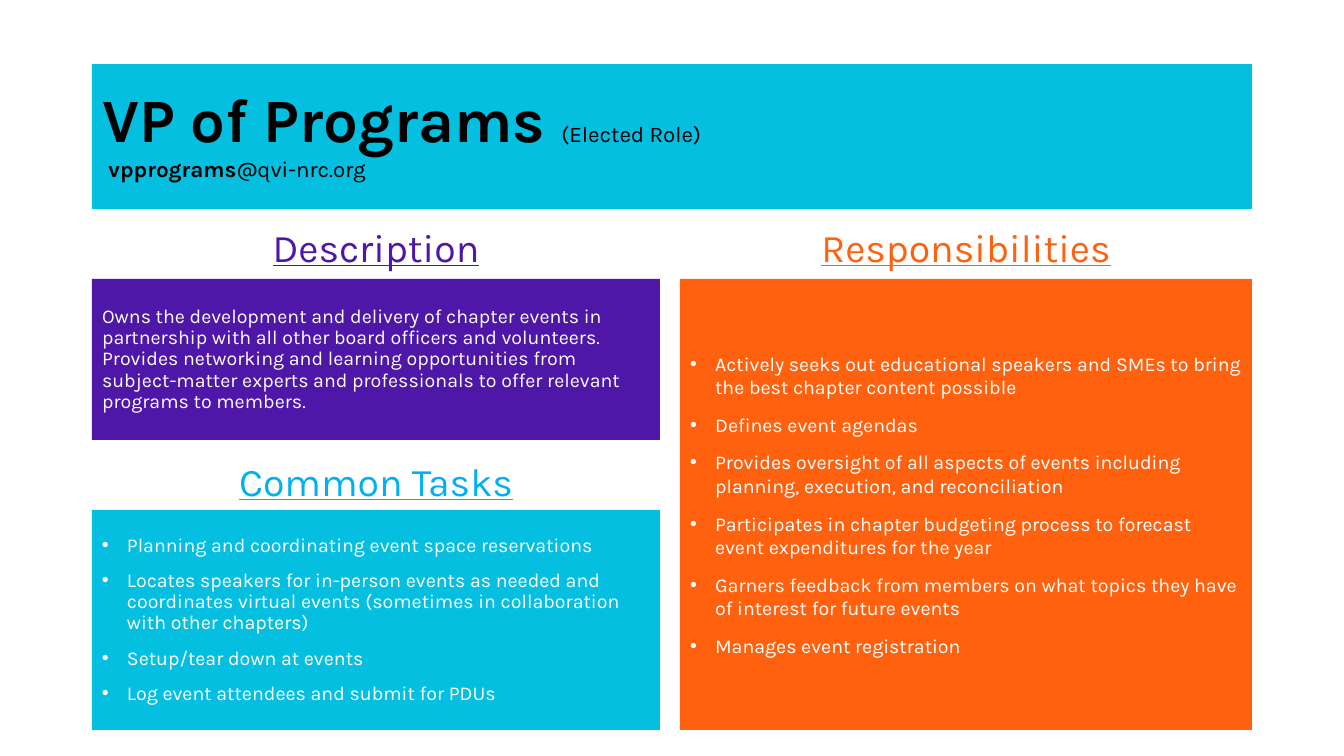
from lxml.etree import SubElement
from pptx import Presentation
from pptx.dml.color import RGBColor
from pptx.enum.text import MSO_ANCHOR, MSO_AUTO_SIZE, PP_ALIGN
from pptx.oxml.ns import qn
from pptx.util import Emu, Pt

FONT = "Karla"
CYAN, SKY, PURPLE, ORANGE = "04BFE0", "00B0F0", "4E17A8", "FF610F"
BLACK, WHITE = "000000", "FFFFFF"

TITLE_LINES = [
    [("VP of Programs ", 44, True), ("(Elected Role)", 16, False)],
    [(" ", 18, True), ("vpprograms", 16, True), ("@qvi-nrc.org", 16, False)],
]
DESCRIPTION = [
    "Owns the development and delivery of chapter events in partnership with all other "
    "board officers and volunteers. Provides networking and learning opportunities from "
    "subject-matter experts and professionals to offer relevant programs to members.",
]
TASKS = [
    "Planning and coordinating event space reservations",
    "Locates speakers for in-person events as needed and coordinates virtual events "
    "(sometimes in collaboration with other chapters)",
    "Setup/tear down at events",
    "Log event attendees and submit for PDUs",
]
RESPONSIBILITIES = [
    "Actively seeks out educational speakers and SMEs to bring the best chapter content possible",
    "Defines event agendas",
    "Provides oversight of all aspects of events including planning, execution, and reconciliation",
    "Participates in chapter budgeting process to forecast event expenditures for the year",
    "Garners feedback from members on what topics they have of interest for future events",
    "Manages event registration",
]

LEFT, RIGHT, GUTTER, COLUMN = 92, 1252, 20, 568
RIGHT_COLUMN = LEFT + COLUMN + GUTTER
BOTTOM = 730
INDENT = 25

SECTIONS = [
    dict(heading="Description", heading_color=PURPLE, fill=PURPLE, lines=DESCRIPTION,
         bulleted=False, spacing=0.9, left=LEFT, right=LEFT + COLUMN,
         heading_top=185, heading_bottom=276, top=279, bottom=440, holders=(1, 2)),
    dict(heading="Responsibilities", heading_color=ORANGE, fill=ORANGE, lines=RESPONSIBILITIES,
         bulleted=True, spacing=1.0, left=RIGHT_COLUMN, right=RIGHT,
         heading_top=185, heading_bottom=276, top=279, bottom=BOTTOM, holders=(3, 4)),
    dict(heading="Common Tasks", heading_color=SKY, fill=CYAN, lines=TASKS,
         bulleted=True, spacing=0.9, left=LEFT, right=LEFT + COLUMN,
         heading_top=430, heading_bottom=510, top=510, bottom=BOTTOM, holders=None),
]


def px(length):
    return Emu(round(length * 914400 / 100.8))


def color(value):
    return RGBColor.from_string(value)


def place(box, left, top, right, bottom, anchor, fill=None):
    box.left, box.top = px(left), px(top)
    box.width, box.height = px(right - left), px(bottom - top)
    if fill:
        box.fill.solid()
        box.fill.fore_color.rgb = color(fill)
    frame = box.text_frame
    frame.word_wrap = True
    frame.auto_size = MSO_AUTO_SIZE.NONE
    frame.vertical_anchor = anchor
    return frame


def format_para(para, spacing, before, align=PP_ALIGN.LEFT, bulleted=False):
    para.alignment = align
    para.line_spacing = spacing
    para.space_before = Pt(before)
    properties = para._p.get_or_add_pPr()
    indent = px(INDENT) if bulleted else 0
    properties.set("marL", str(indent))
    properties.set("indent", str(-indent))
    if bulleted:
        SubElement(properties, qn("a:buFont")).set("typeface", "Arial")
        SubElement(properties, qn("a:buChar")).set("char", "•")
    else:
        SubElement(properties, qn("a:buNone"))


def add_span(para, text, size, value, bold=False, underline=False):
    span = para.add_run()
    span.text = text
    font = span.font
    font.name, font.size, font.bold = FONT, Pt(size), bold
    font.underline = underline
    font.color.rgb = color(value)


def add_title(page):
    frame = place(page.shapes.title, LEFT, 64, RIGHT, 209, MSO_ANCHOR.MIDDLE, CYAN)
    para = frame.paragraphs[0]
    format_para(para, 0.9, 0)
    for number, line in enumerate(TITLE_LINES):
        if number:
            para.add_line_break()
        for text, size, bold in line:
            add_span(para, text, size, BLACK, bold)


def add_section(page, section):
    if section["holders"]:
        heading, body = [page.placeholders[index] for index in section["holders"]]
    else:
        heading, body = [page.shapes.add_textbox(0, 0, 0, 0) for _ in range(2)]
    left, right = section["left"], section["right"]

    frame = place(heading, left, section["heading_top"], right,
                  section["heading_bottom"], MSO_ANCHOR.BOTTOM)
    para = frame.paragraphs[0]
    format_para(para, 0.9, 10, PP_ALIGN.CENTER)
    add_span(para, section["heading"], 28, section["heading_color"], underline=True)

    frame = place(body, left, section["top"], right, section["bottom"],
                  MSO_ANCHOR.MIDDLE, section["fill"])
    for number, line in enumerate(section["lines"]):
        para = frame.add_paragraph() if number else frame.paragraphs[0]
        format_para(para, section["spacing"], 10, bulleted=section["bulleted"])
        add_span(para, line, 14, WHITE)


def main():
    deck = Presentation()
    deck.slide_width, deck.slide_height = px(1344), px(756)
    page = deck.slides.add_slide(deck.slide_layouts.get_by_name("Comparison"))
    add_title(page)
    for section in SECTIONS:
        add_section(page, section)
    deck.save("out.pptx")


if __name__ == "__main__":
    main()
